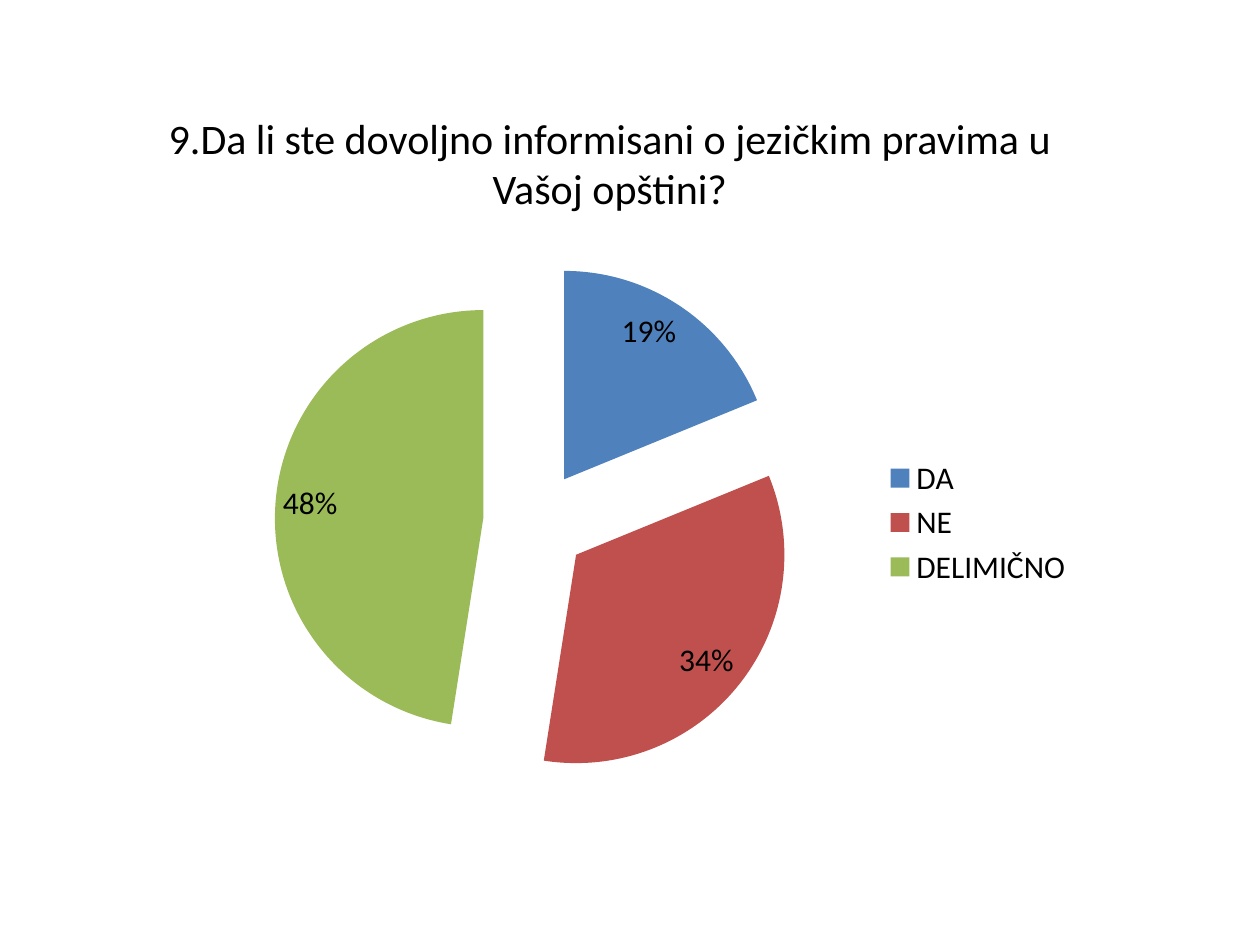
from pptx import Presentation, util as u
from pptx.chart.data import CategoryChartData
from pptx.dml.color import RGBColor
from pptx.enum import chart as c, text as t
from pptx.oxml import parse_xml
from pptx.oxml.ns import nsdecls

QUESTION = "9.Da li ste dovoljno informisani o jezičkim pravima u Vašoj opštini?"
ANSWERS = [("DA", 19, "blue"), ("NE", 34, "red"), ("DELIMIČNO", 48, "green")]
COLOURS = {"text": "000000", "blue": "4F81BD", "red": "C0504D", "green": "9BBB59"}
FONT = "Calibri"
EXPLOSION = 25  # percent of the radius

WIDTH, HEIGHT = 10, 7.5
# left, top, width, height as shares of the slide
QUESTION_BOX = (0.098, 0.112, 0.772, 0.121)
CHART_BOX = (0.151, 0.259, 0.711, 0.588)


def place(box):
    return [u.Inches(share * side) for share, side in zip(box, (WIDTH, HEIGHT) * 2)]


def set_all(target, values):
    for name, value in values.items():
        setattr(target, name, value)


def style_font(font, size):
    set_all(font, {"name": FONT, "size": u.Pt(size)})
    font.color.rgb = RGBColor.from_string(COLOURS["text"])


def add_question(slide):
    frame = slide.shapes.add_textbox(*place(QUESTION_BOX)).text_frame
    set_all(frame, {"word_wrap": True, "auto_size": t.MSO_AUTO_SIZE.SHAPE_TO_FIT_TEXT})
    paragraph = frame.paragraphs[0]
    paragraph.alignment = t.PP_ALIGN.CENTER
    run = paragraph.add_run()
    run.text = QUESTION
    style_font(run.font, 24)


def add_answer_chart(slide):
    names, values, fills = zip(*ANSWERS)
    data = CategoryChartData()
    data.categories = names
    data.add_series("Series 1", values)
    chart = slide.shapes.add_chart(c.XL_CHART_TYPE.PIE, *place(CHART_BOX), data).chart
    set_all(chart, {"has_title": False, "has_legend": True})
    set_all(chart.legend, {"position": c.XL_LEGEND_POSITION.RIGHT,
                           "include_in_layout": False})
    style_font(chart.font, 18)

    plot = chart.plots[0]
    set_all(plot, {"vary_by_categories": True, "has_data_labels": True})
    set_all(plot.data_labels, {
        "show_percentage": True, "show_value": False,
        "number_format": "0%", "number_format_is_linked": False,
        "position": c.XL_LABEL_POSITION.INSIDE_END,
    })

    series = plot.series[0]
    for index, name in enumerate(fills):
        fill = series.points[index].format.fill
        fill.solid()
        fill.fore_color.rgb = RGBColor.from_string(COLOURS[name])
    explosion = parse_xml(f'<c:explosion {nsdecls("c")} val="{EXPLOSION}"/>')
    series.points[0]  # the explosion precedes the first c:dPt
    series._element.find("{*}dPt").addprevious(explosion)


def main():
    presentation = Presentation()
    set_all(presentation, {"slide_width": u.Inches(WIDTH), "slide_height": u.Inches(HEIGHT)})
    slide = presentation.slides.add_slide(presentation.slide_layouts[6])
    add_question(slide)
    add_answer_chart(slide)
    presentation.save("out.pptx")


if __name__ == "__main__":
    main()
